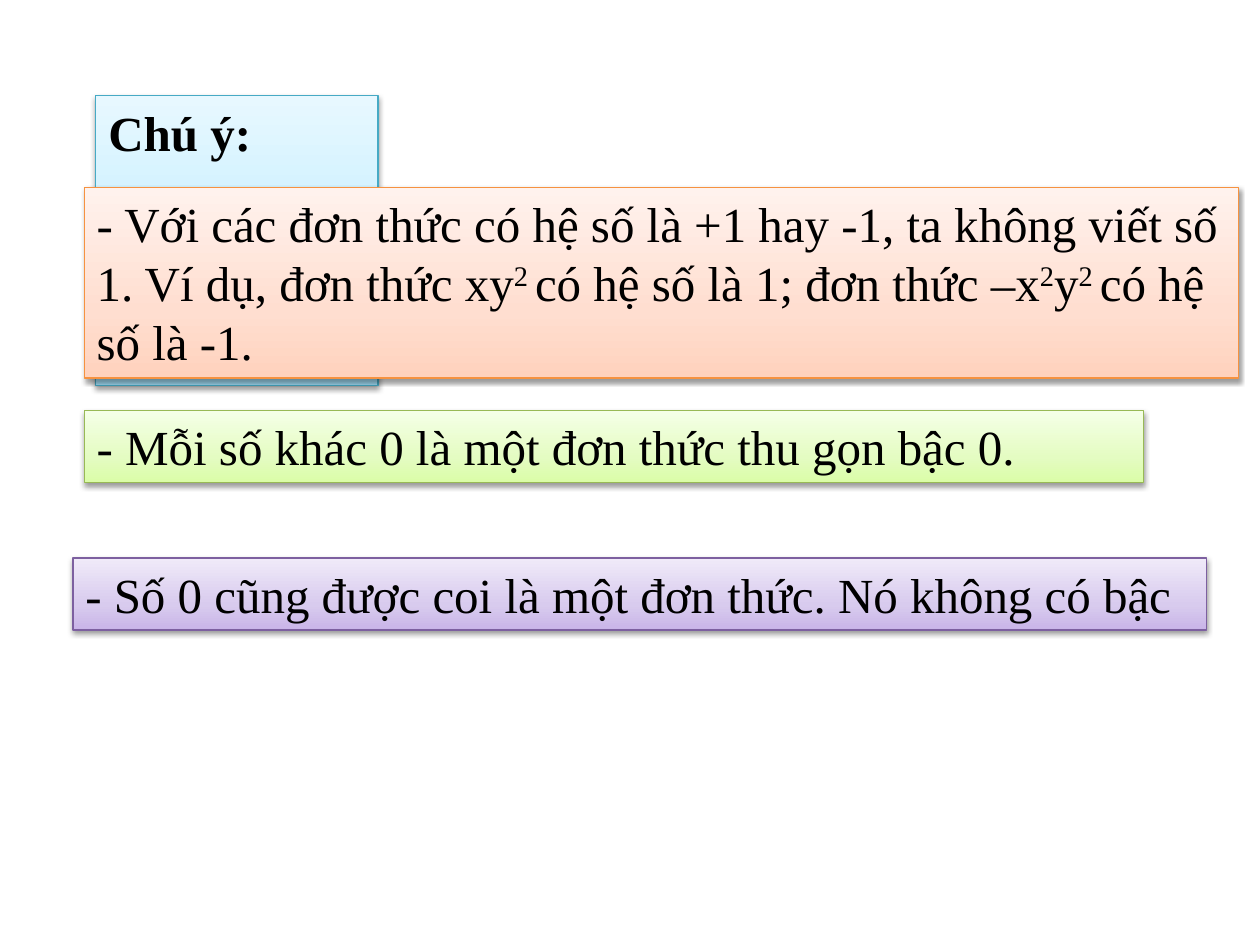
"""Build a slide of notes on monomials, one gradient box per note."""
from copy import deepcopy

from lxml import etree
from pptx import Presentation
from pptx.dml.color import RGBColor
from pptx.enum.text import MSO_ANCHOR, MSO_AUTO_SIZE, PP_ALIGN
from pptx.oxml.ns import qn
from pptx.util import Cm, Pt

LEFT = PP_ALIGN.LEFT
TOP = MSO_ANCHOR.TOP
FIT_SHAPE = MSO_AUTO_SIZE.SHAPE_TO_FIT_TEXT

FONT = "Times New Roman"
TITLE_LAYOUT = 5
STOP_POSITIONS = (0, 0.35, 1)
COLORS = {
    "text": "000000",
    "blue": ("46AAC5", "A7E6FF", "C1EDFF", "E7F8FF"),
    "orange": ("F69240", "FFD2BD", "FFDED0", "FFF2ED"),
    "green": ("98B955", "DAFDA7", "E4FCC2", "F5FFE7"),
    "purple": ("7D60A0", "C9B5E8", "D8CBEE", "F0EAF9"),
}
NOTES = [
    ("orange", 1.7, 3.78, 23.27, 3.84, [
        "- Với các đơn thức có hệ số là +1 hay -1, ta không viết số 1. Ví dụ, đơn thức xy",
        "2 ", "có hệ số là 1; đơn thức –x", "2", "y", "2 ", "có hệ số là -1."]),
    ("green", 1.7, 8.28, 21.36, 1.45, ["- Mỗi số khác 0 là một đơn thức thu gọn bậc 0."]),
    ("purple", 1.47, 11.25, 22.86, 1.45,
     ["- Số 0 cũng được coi là một đơn thức. Nó không có bậc"]),
]


def style_box(shape, color_name):
    """Give the box its gradient, outline and soft shadow."""
    line_color, *stop_colors = COLORS[color_name]
    shape.fill.gradient()
    shape.fill.gradient_angle = 90
    properties = shape._element.spPr
    stop_list = properties.find(qn("a:gradFill")).find(qn("a:gsLst"))
    stop_list.append(deepcopy(stop_list[-1]))
    for stop, position, color in zip(shape.fill.gradient_stops, STOP_POSITIONS, stop_colors):
        stop.position = position
        stop.color.rgb = RGBColor.from_string(color)
    shape.line.color.rgb = RGBColor.from_string(line_color)
    shape.line.width = Pt(0.75)
    shape.shadow.inherit = False
    shadow = etree.SubElement(
        properties.find(qn("a:effectLst")), qn("a:outerShdw"),
        blurRad="40000", dist="20000", dir="5400000", rotWithShape="0")
    shadow_color = etree.SubElement(shadow, qn("a:srgbClr"), val=COLORS["text"])
    etree.SubElement(shadow_color, qn("a:alpha"), val="38000")


def write_text(shape, parts, bold=False):
    """Write the parts as runs, every second one raised."""
    frame = shape.text_frame
    frame.word_wrap = True
    frame.auto_size = FIT_SHAPE
    frame.vertical_anchor = TOP
    paragraph = frame.paragraphs[0]
    paragraph.alignment = LEFT
    paragraph.font.name = FONT
    paragraph.font.size = Pt(28)
    paragraph.font.bold = bold
    paragraph.font.color.rgb = RGBColor.from_string(COLORS["text"])
    for index, part in enumerate(parts):
        run = paragraph.add_run()
        run.text = part
        if index % 2:
            run._r.get_or_add_rPr().set("baseline", "30000")


presentation = Presentation()
presentation.slide_width = Cm(25.4)
presentation.slide_height = Cm(19.05)
slide = presentation.slides.add_slide(presentation.slide_layouts[TITLE_LAYOUT])

title = slide.shapes.title
title.left, title.top, title.width, title.height = Cm(1.93), Cm(1.93), Cm(5.69), Cm(1.45)
style_box(title, "blue")
write_text(title, ["Chú ý:"], bold=True)

for color_name, left, top, width, height, parts in NOTES:
    note = slide.shapes.add_textbox(Cm(left), Cm(top), Cm(width), Cm(height))
    style_box(note, color_name)
    write_text(note, parts)

presentation.save("out.pptx")
